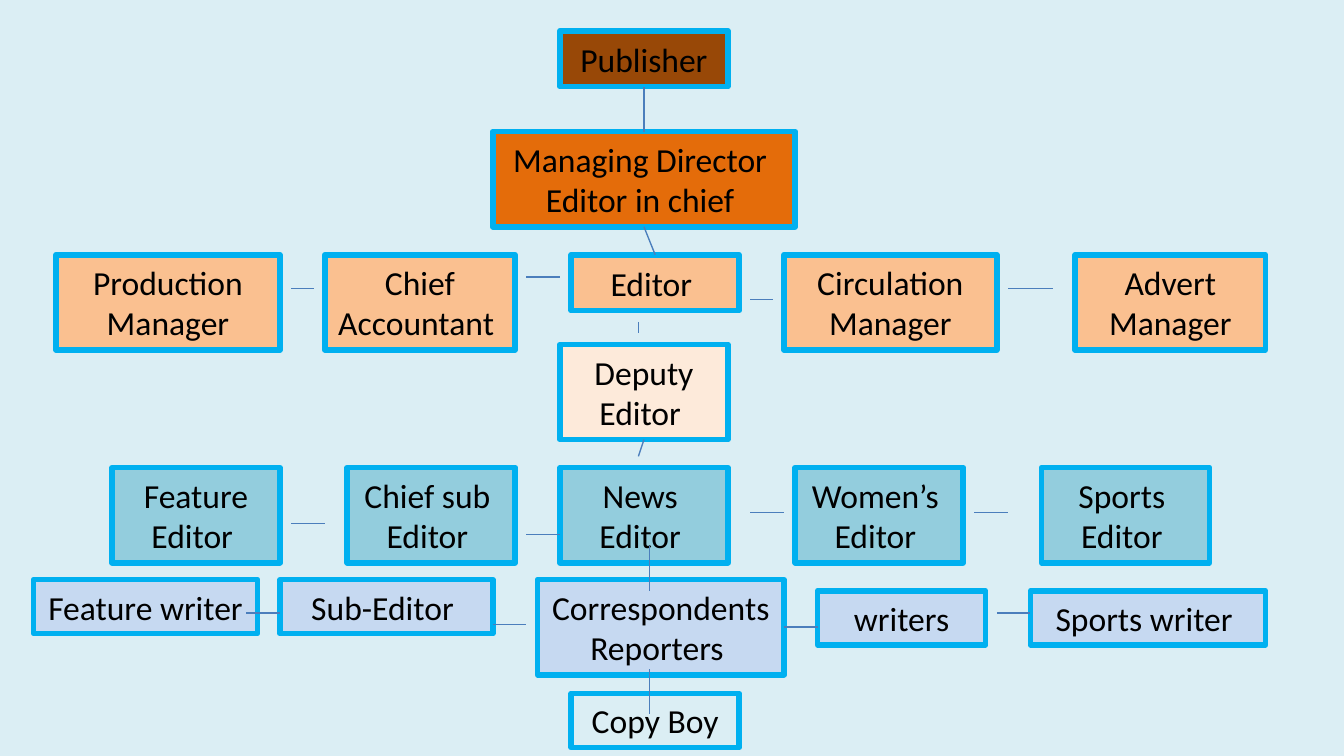
from lxml import etree
from pptx import Presentation
from pptx.dml.color import RGBColor
from pptx.enum.shapes import MSO_CONNECTOR, MSO_SHAPE
from pptx.enum.text import MSO_ANCHOR, MSO_AUTO_SIZE, PP_ALIGN
from pptx.oxml.ns import qn
from pptx.util import Pt

RECTANGLE = MSO_SHAPE.RECTANGLE
STRAIGHT = MSO_CONNECTOR.STRAIGHT
CENTER = PP_ALIGN.CENTER
MIDDLE = MSO_ANCHOR.MIDDLE
FIT_SHAPE = MSO_AUTO_SIZE.SHAPE_TO_FIT_TEXT
TOP, BOTTOM, RIGHT = 0, 2, 3

COLORS = {
    "background": "DBEEF4",
    "border": "00B0F0",
    "link": "4B7EBC",
    "text": "000000",
    "publisher": "984807",
    "director": "E46C0A",
    "manager": "FAC090",
    "deputy": "FDEADA",
    "section": "93CDDD",
    "staff": "C6D9F1",
}
ONE_LINE, TWO_LINES, STAFF_LINE = 30, 51, 29
MANAGER_TOP, SECTION_TOP, STAFF_TOP, OUTER_STAFF_TOP = 136.5, 250.5, 310.5, 316.5

BOXES = [
    ("Publisher", 300, 16.5, 90, ONE_LINE, "publisher"),
    ("Managing Director \nEditor in chief ", 264, 70.5, 162, TWO_LINES, "director"),
    ("Production Manager", 30, MANAGER_TOP, 120, TWO_LINES, "manager"),
    ("Chief Accountant ", 174, MANAGER_TOP, 102, TWO_LINES, "manager"),
    ("Editor ", 306, MANAGER_TOP, 90, ONE_LINE, "manager"),
    ("Circulation Manager", 420, MANAGER_TOP, 114, TWO_LINES, "manager"),
    ("Advert Manager", 576, MANAGER_TOP, 102, TWO_LINES, "manager"),
    ("Deputy\nEditor ", 300, 184.5, 90, TWO_LINES, "deputy"),
    ("Feature\nEditor ", 60, SECTION_TOP, 90, TWO_LINES, "section"),
    ("Chief sub \nEditor ", 186, SECTION_TOP, 90, TWO_LINES, "section"),
    ("News \nEditor ", 300, SECTION_TOP, 90, TWO_LINES, "section"),
    ("Women’s \nEditor ", 426, SECTION_TOP, 90, TWO_LINES, "section"),
    ("Sports \nEditor ", 558, SECTION_TOP, 90, TWO_LINES, "section"),
    ("Feature writer ", 18, STAFF_TOP, 120, STAFF_LINE, "staff"),
    ("Sub-Editor ", 150, STAFF_TOP, 114, STAFF_LINE, "staff"),
    ("Correspondents Reporters ", 288, STAFF_TOP, 132, TWO_LINES, "staff"),
    ("writers", 438, OUTER_STAFF_TOP, 90, STAFF_LINE, "staff"),
    ("Sports writer ", 552, OUTER_STAFF_TOP, 126, STAFF_LINE, "staff"),
    ("Copy Boy", 306, 371.5, 90, STAFF_LINE, None),
]

HORIZONTAL_LINKS = [
    (156, 168, 154.5), (282, 300, 148.5), (402, 414, 160.5), (540, 564, 154.5),
    (156, 174, 280.5), (282, 300, 286.5), (402, 420, 274.5), (522, 540, 274.5),
    (132, 150, 328.5), (264, 282, 334.5), (534, 552, 328.5),
]
VERTICAL_LINKS = [(342, 172.5, 178.5), (348, 292.5, 316.5), (348, 358.5, 382.5)]


class ChartSlide:
    """Holds the style and the slide, and draws boxes and links on it."""

    def __init__(self, slide):
        self.slide = slide
        self.font_name = "Calibri"
        self.font_size = Pt(18)
        self.border_width = Pt(3)
        self.link_width = Pt(0.75)

    def color(self, name):
        return RGBColor.from_string(COLORS[name])

    def background(self):
        fill = self.slide.background.fill
        fill.solid()
        fill.fore_color.rgb = self.color("background")

    def box(self, text, left, top, width, height, fill_name):
        shape = self.slide.shapes.add_shape(
            RECTANGLE, Pt(left), Pt(top), Pt(width), Pt(height))
        shape.shadow.inherit = False
        if fill_name:
            shape.fill.solid()
            shape.fill.fore_color.rgb = self.color(fill_name)
        else:
            shape.fill.background()
        shape.line.color.rgb = self.color("border")
        shape.line.width = self.border_width
        text_frame = shape.text_frame
        text_frame.text = text
        text_frame.word_wrap = True
        text_frame.auto_size = FIT_SHAPE
        text_frame.vertical_anchor = MIDDLE
        for paragraph in text_frame.paragraphs:
            paragraph.alignment = CENTER
            for run in paragraph.runs:
                run.font.name = self.font_name
                run.font.size = self.font_size
                run.font.color.rgb = self.color("text")
        return shape

    def link(self, begin, end):
        connector = self.slide.shapes.add_connector(
            STRAIGHT, *(Pt(value) for value in begin + end))
        connector.line.color.rgb = self.color("link")
        connector.line.width = self.link_width
        etree.SubElement(connector._element.spPr, qn("a:effectLst"))
        return connector


def main():
    presentation = Presentation()
    presentation.slide_width, presentation.slide_height = Pt(720), Pt(405)
    slide = presentation.slides.add_slide(presentation.slide_layouts[6])
    chart = ChartSlide(slide)
    chart.background()

    boxes = {box[0].split()[0]: chart.box(*box) for box in BOXES[:7]}
    boxes.update({box[0].strip(): chart.box(*box) for box in BOXES[7:]})

    for upper, lower in [("Publisher", "Managing"), ("Managing", "Editor")]:
        connector = chart.link((345, 0), (345, 0))
        connector.begin_connect(boxes[upper], BOTTOM)
        connector.end_connect(boxes[lower], TOP)
    deputy_link = chart.link((345, 235.5), (342, 244.5))
    deputy_link.begin_connect(boxes["Deputy\nEditor"], BOTTOM)
    writers_link = chart.link((420, 336), (438, 336))
    writers_link.begin_connect(boxes["Correspondents Reporters"], RIGHT)

    for left, right, y in HORIZONTAL_LINKS:
        chart.link((left, y), (right, y))
    for x, top, bottom in VERTICAL_LINKS:
        chart.link((x, top), (x, bottom))
    presentation.save("out.pptx")


if __name__ == "__main__":
    main()
